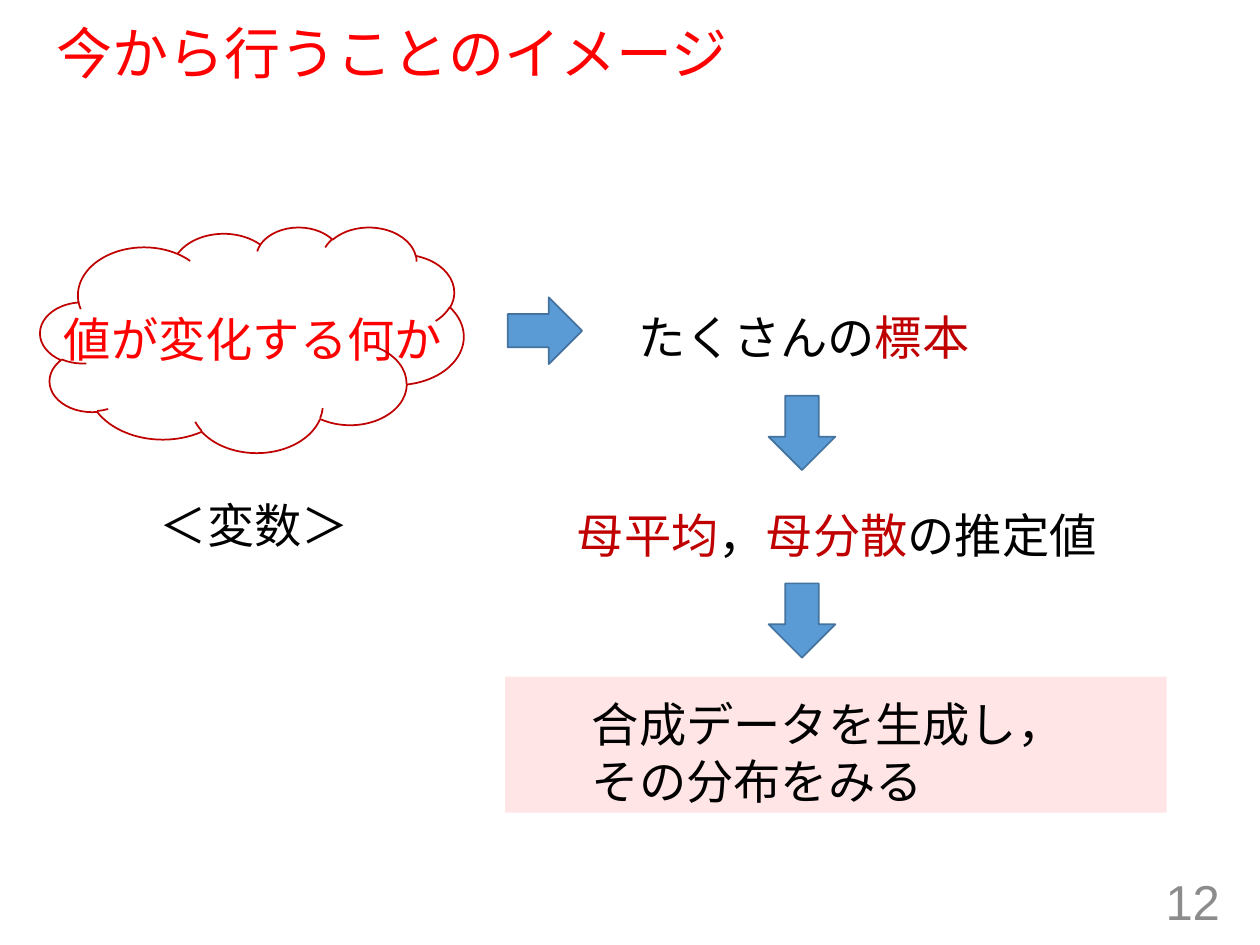
from lxml.etree import SubElement
from pptx import Presentation
from pptx.dml.color import RGBColor
from pptx.enum.shapes import MSO_SHAPE
from pptx.enum.text import MSO_ANCHOR, PP_ALIGN
from pptx.oxml.ns import qn
from pptx.util import Inches, Pt

RED, DARK_RED, BLACK, GRAY = "FF0000", "C00000", "000000", "8C8C8C"
BLUE, BLUE_EDGE = "5B9BD5", "43739E"

TITLE = [[("今から行うことのイメージ", RED)]]
PAGE_NUMBER = [[("12", GRAY)]]
CONCLUSION = [[("合成データを生成し，", BLACK)], [("その分布をみる", BLACK)]]
LABELS = [
    ((0.41, 2.41, 3.23, 0.56), [[("値が変化する何か", RED)]]),
    ((1.17, 3.89, 1.72, 0.56), [[("＜変数＞", BLACK)]]),
    ((4.97, 2.4, 2.85, 0.56), [[("たくさんの", BLACK), ("標本", DARK_RED)]]),
    ((4.48, 3.97, 4.37, 0.56), [[("母平均", DARK_RED), ("，", BLACK),
                                 ("母分散", DARK_RED), ("の推定値", BLACK)]]),
]
CONCLUSION_PANEL = (4.01, 5.37, 5.25, 1.08)
CLOUD = (0.32, 1.8, 3.36, 1.79)
ARROW_SIZE = (0.59, 0.53)
ARROWS = [(4.03, 2.36, 0), (6.07, 3.17, 90), (6.07, 4.66, 90)]


def rgb(code):
    return RGBColor.from_string(code)


def add_text(slide, place, paragraphs, size=27, wrap=False,
             align=PP_ALIGN.LEFT, anchor=MSO_ANCHOR.TOP, spacing=1.0):
    frame = slide.shapes.add_textbox(*map(Inches, place)).text_frame
    frame.word_wrap = wrap
    frame.vertical_anchor = anchor
    for index, runs in enumerate(paragraphs):
        line = frame.add_paragraph() if index else frame.paragraphs[0]
        line.alignment = align
        line.line_spacing = spacing
        for words, color in runs:
            run = line.add_run()
            run.text = words
            run.font.name = "Arial"
            run.font.size = Pt(size)
            run.font.color.rgb = rgb(color)


def add_figure(slide, kind, place, fill=None, edge=None, opacity=None):
    figure = slide.shapes.add_shape(kind, *map(Inches, place))
    figure.shadow.inherit = False
    if fill:
        figure.fill.solid()
        figure.fill.fore_color.rgb = rgb(fill)
    else:
        figure.fill.background()
    if opacity:
        color = figure.fill._xPr.find(qn("a:solidFill"))[0]
        SubElement(color, qn("a:alpha"), val=str(opacity * 1000))
    if edge:
        figure.line.color.rgb = rgb(edge)
        figure.line.width = Pt(1)
    else:
        figure.line.fill.background()
    return figure


def main():
    deck = Presentation()
    deck.slide_width, deck.slide_height = Inches(10), Inches(7.5)
    slide = deck.slides.add_slide(deck.slide_layouts[6])

    add_figure(slide, MSO_SHAPE.RECTANGLE, CONCLUSION_PANEL, fill=RED, opacity=10)
    add_text(slide, (0.35, 0.19, 9.25, 0.51), TITLE, size=32, wrap=True,
             anchor=MSO_ANCHOR.MIDDLE, spacing=0.9)
    add_text(slide, (7.53, 6.95, 2.25, 0.4), PAGE_NUMBER, size=28, wrap=True,
             align=PP_ALIGN.RIGHT, anchor=MSO_ANCHOR.MIDDLE)
    for place, paragraphs in LABELS:
        add_text(slide, place, paragraphs)
    add_text(slide, (4.6, 5.47, 4.2, 1.01), CONCLUSION, wrap=True)
    add_figure(slide, MSO_SHAPE.CLOUD, CLOUD, edge=DARK_RED)
    for left, top, turn in ARROWS:
        arrow = add_figure(slide, MSO_SHAPE.RIGHT_ARROW, (left, top, *ARROW_SIZE),
                           fill=BLUE, edge=BLUE_EDGE)
        arrow.rotation = turn

    deck.save("out.pptx")


if __name__ == "__main__":
    main()
